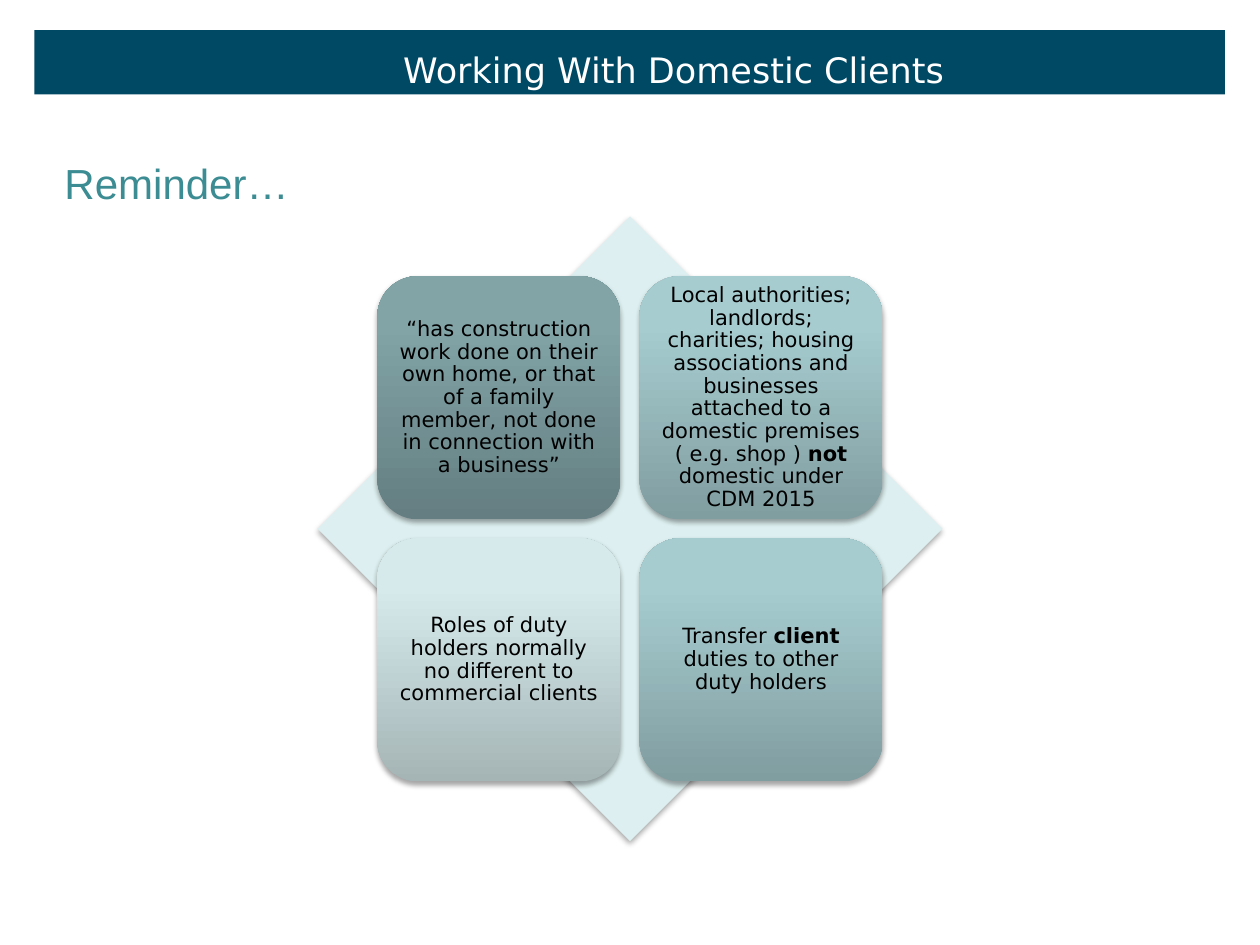
from lxml import etree
from pptx import Presentation
from pptx.dml.color import RGBColor
from pptx.enum.shapes import MSO_SHAPE as Shape
from pptx.enum.text import MSO_ANCHOR as Anchor, PP_ALIGN as Align
from pptx.oxml import parse_xml
from pptx.oxml.ns import nsdecls
from pptx.util import Pt

# Content: each tile holds (text, bold) runs and a gradient name
TITLE = "Working With Domestic Clients"
HEADING = "Reminder…"
TILES = [
    ([("“has construction work done on their own home, or that of a family "
       "member, not done in connection with a business”", False)], "dark"),
    ([("Local authorities; landlords; charities; housing associations and "
       "businesses attached to a domestic premises ( e.g. shop ) ", False),
      ("not", True), (" domestic under CDM 2015", False)], "medium"),
    ([("Roles of duty holders normally no different to commercial clients",
       False)], "light"),
    ([("Transfer ", False), ("client ", True),
      ("duties to other duty holders", False)], "medium"),
]

COLORS = {"banner": "004964", "title": "FFFFFF", "heading": "3C8C93",
          "diamond": "DDEFF0", "text": "000000", "shadow": "000000"}
GRADIENTS = {  # bottom, near the top, top
    "dark": ("647E81", "82A4A7", "82A6A9"),
    "medium": ("809DA0", "A6CCD0", "A6CED2"),
    "light": ("A5B5B6", "D6EAEC", "D6ECEE"),
}
STOPS = (0, 80, 100)
BODY_FONT, HEADING_FONT = "DejaVu Sans", "Arial"

# Layout in points
CENTER_X, CENTER_Y = 360, 302.2
DIAMOND, TILE, GAP = 357, 139, 10.8


def add_shape(kind, left, top, width, height, color=None):
    shape = slide.shapes.add_shape(kind, Pt(left), Pt(top), Pt(width), Pt(height))
    shape.shadow.inherit = False
    shape.line.fill.background()
    if color:
        shape.fill.solid()
        shape.fill.fore_color.rgb = RGBColor.from_string(COLORS[color])
    return shape


def add_soft_shadow(shape):
    effects = shape._element.spPr.find("{*}effectLst")
    effects.append(parse_xml(
        f'<a:outerShdw {nsdecls("a")} blurRad="{Pt(3.1)}" dist="{Pt(1.8)}" '
        f'dir="5400000" rotWithShape="0"><a:srgbClr val="{COLORS["shadow"]}">'
        '<a:alpha val="35000"/></a:srgbClr></a:outerShdw>'))


def fill_gradient(shape, colors):
    shape.fill.gradient()
    shape.fill.gradient_angle = 90
    stop_list = shape._element.spPr.find("{*}gradFill/{*}gsLst")
    for stop in list(stop_list):
        stop_list.remove(stop)
    for position, color in zip(STOPS, colors):
        stop_list.append(parse_xml(
            f'<a:gs {nsdecls("a")} pos="{position * 1000}">'
            f'<a:srgbClr val="{color}"/></a:gs>'))


def set_font(paragraph, name, size, color):
    paragraph.font.name = name
    paragraph.font.size = Pt(size)
    paragraph.font.color.rgb = RGBColor.from_string(COLORS[color])


def add_label(text, left, top, width, height, font, size, color):
    frame = slide.shapes.add_textbox(
        Pt(left), Pt(top), Pt(width), Pt(height)).text_frame
    paragraph = frame.paragraphs[0]
    paragraph.text = text
    set_font(paragraph, font, size, color)
    return frame


def add_tile(runs, gradient, left, top):
    tile = add_shape(Shape.ROUNDED_RECTANGLE, left, top, TILE, TILE)
    fill_gradient(tile, GRADIENTS[gradient])
    add_soft_shadow(tile)
    frame = tile.text_frame
    frame.word_wrap = True
    frame.vertical_anchor = Anchor.MIDDLE
    frame.margin_left = frame.margin_right = Pt(3.6)
    frame.margin_top = frame.margin_bottom = Pt(3.6)
    paragraph = frame.paragraphs[0]
    paragraph.alignment = Align.CENTER
    paragraph.line_spacing = 0.9
    set_font(paragraph, BODY_FONT, 12, "text")
    for text, bold in runs:
        run = paragraph.add_run()
        run.text = text
        run.font.bold = bold


prs = Presentation()
prs.slide_width, prs.slide_height = Pt(720), Pt(540)
slide = prs.slides.add_slide(prs.slide_layouts[6])

# Banner with title
add_shape(Shape.RECTANGLE, 19.6, 17.2, 680.4, 36.8, "banner")
title = add_label(TITLE, 67.5, 10.8, 635, 43.9, BODY_FONT, 20, "title")
title.word_wrap = True
title.vertical_anchor = Anchor.BOTTOM
title.paragraphs[0].alignment = Align.CENTER
title.paragraphs[0].line_spacing = 0.75

# Diamond behind a two by two grid of tiles
diamond = add_shape(Shape.DIAMOND, CENTER_X - DIAMOND / 2,
                    CENTER_Y - DIAMOND / 2, DIAMOND, DIAMOND, "diamond")
add_soft_shadow(diamond)
grid_left = CENTER_X - TILE - GAP / 2
grid_top = CENTER_Y - TILE - GAP / 2
for index, (runs, gradient) in enumerate(TILES):
    row, column = divmod(index, 2)
    add_tile(runs, gradient, grid_left + column * (TILE + GAP),
             grid_top + row * (TILE + GAP))

# Heading
heading = add_label(HEADING, 29.8, 86.6, 144, 36, HEADING_FONT, 24, "heading")
heading.word_wrap = False

prs.save("out.pptx")
